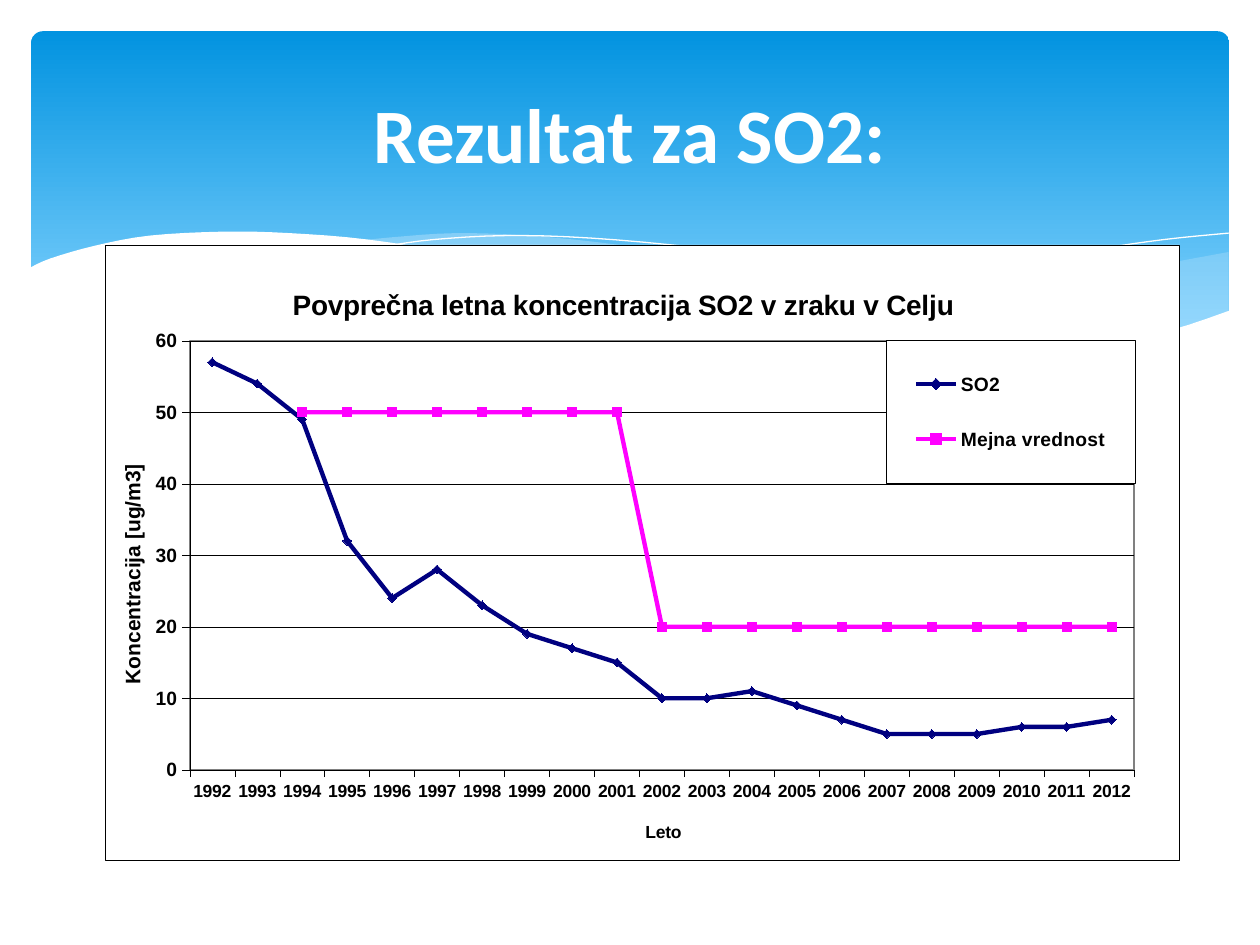
from lxml.etree import SubElement
from pptx import Presentation
from pptx.chart.data import CategoryChartData as ChartData
from pptx.dml.color import RGBColor as RGB
from pptx.enum.chart import XL_CHART_TYPE as CT, XL_LEGEND_POSITION as LP
from pptx.enum.chart import XL_MARKER_STYLE as MS, XL_TICK_MARK as TM
from pptx.enum.shapes import MSO_SHAPE as SHAPE
from pptx.enum.text import MSO_ANCHOR as ANCHOR, PP_ALIGN as ALIGN
from pptx.oxml import parse_xml
from pptx.oxml.ns import nsdecls, qn
from pptx.util import Cm, Pt

COLORS = {"top": "0293E0", "bottom": "83D3FE", "wave": "C6E7FC", "white": "FFFFFF",
          "black": "000000", "frame": "808080", "so2": "000080", "limit": "FF00FF"}

SWELL = [(24.77, 5.08), (23.01, 5.41), (21.87, 5.66), (19.13, 6.3), (16.79, 6.73),
         (18.59, 6.96), (20.4, 7.06), (21.92, 6.98), (23.19, 6.78), (24.1, 6.53),
         (24.77, 6.27)]
BAND = [(7.26, 4.85), (9.19, 5.16), (11.4, 5.64), (13.46, 6.1), (15.7, 6.55),
        (17.65, 6.86), (19.33, 7.04), (21.03, 7.06), (22.68, 6.93), (20.5, 6.6),
        (17.93, 6.1), (15.98, 5.64), (14.1, 5.21), (12.42, 4.93), (10.67, 4.75),
        (9.17, 4.7), (7.95, 4.78), (7.26, 4.85)]
FALLING = [(7.85, 4.95), (8.74, 4.83), (10.19, 4.75), (11.91, 4.8), (14.12, 5),
           (16.15, 5.28), (18.47, 5.74), (21.11, 6.38), (23.04, 6.91)]
RISING = [(15.57, 6.53), (17.65, 5.97), (19.71, 5.49), (22, 5.05), (23.47, 4.83),
          (24.77, 4.7)]
SHORE = [(24.82, 6.25), (23.62, 6.65), (22.23, 6.93), (20.55, 7.04), (18.44, 6.91),
         (16.46, 6.65), (14.1, 6.22), (11.35, 5.59), (9.27, 5.13), (7.42, 4.83),
         (5.84, 4.7), (4.5, 4.67), (3.02, 4.75), (1.93, 4.95), (1.02, 5.21), (0.58, 5.41)]

SO2 = [57, 54, 49, 32, 24, 28, 23, 19, 17, 15, 10, 10, 11, 9, 7, 5, 5, 5, 6, 6, 7]
LIMIT = [None] * 2 + [50] * 8 + [20] * 11


def rgb(name):
    """Return the named colour."""
    return RGB.from_string(COLORS[name])


def style_font(font, size, face="Arial", color="black", bold=True):
    """Set the look of a font."""
    font.size, font.name, font.bold = Pt(size), face, bold
    font.color.rgb = rgb(color)


def put_text(tf, text, align=ALIGN.CENTER, **fmt):
    """Write one formatted run into a text frame."""
    p = tf.paragraphs[0]
    p.alignment = align
    r = p.add_run()
    r.text = text
    style_font(r.font, **fmt)


def smooth(knots, steps=4):
    """Return points on a Catmull-Rom curve through the knots."""
    ends = [knots[0], *knots, knots[-1]]
    points = [knots[0]]
    for a, b, c, d in zip(ends, ends[1:], ends[2:], ends[3:]):
        for t in (i / steps for i in range(1, steps + 1)):
            points.append(tuple(
                (2 * q + (r - p) * t + (2 * p - 5 * q + 4 * r - s) * t ** 2
                 + (3 * q - p - 3 * r + s) * t ** 3) / 2
                for p, q, r, s in zip(a, b, c, d)))
    return points


def place(el, after=None, inner=False, **frame):
    """Give a chart part a manual layout in fractions of the chart."""
    for old in el.findall(qn("c:layout")):
        el.remove(old)
    tags = {"layoutTarget": "inner"} if inner else {}
    tags.update(xMode="edge", yMode="edge", **frame)
    body = "".join(f'<c:{tag} val="{val}"/>' for tag, val in tags.items())
    layout = parse_xml(f'<c:layout {nsdecls("c")}><c:manualLayout>{body}'
                       '</c:manualLayout></c:layout>')
    if after:
        el.find(qn(after)).addnext(layout)
    else:
        el.insert(0, layout)


def box(el, line="black", width=0.25):
    """Give a chart part a white fill and an outline."""
    sppr = parse_xml(
        f'<c:spPr {nsdecls("c", "a")}><a:solidFill><a:srgbClr val="{COLORS["white"]}"/>'
        f'</a:solidFill><a:ln w="{Pt(width)}"><a:solidFill><a:srgbClr val="{COLORS[line]}"/>'
        '</a:solidFill></a:ln></c:spPr>')
    txpr = el.find(qn("c:txPr"))
    if txpr is None:
        el.append(sppr)
    else:
        txpr.addprevious(sppr)


class Deck:
    """Hold the style and the current slide."""

    def __init__(self, prs):
        self.s = prs.slides.add_slide(prs.slide_layouts[6])
        self.shapes = self.s.shapes

    def banner(self, x, y, w, h):
        """Add the rounded gradient banner."""
        sp = self.shapes.add_shape(SHAPE.ROUNDED_RECTANGLE, Cm(x), Cm(y), Cm(w), Cm(h))
        sp.shadow.inherit = False
        sp.adjustments[0] = 0.034
        sp.line.fill.background()
        sp.fill.gradient()
        sp.fill.gradient_angle = 270
        for stop, name, pos in zip(sp.fill.gradient_stops, ("top", "bottom"), (0, 0.9)):
            stop.color.rgb, stop.position = rgb(name), pos

    def wave(self, knots, fill=None, opacity=100, corners=()):
        """Add a filled wave, or a thin white curve if it has no fill."""
        pts = [(Cm(x), Cm(y)) for x, y in smooth(knots) + list(corners)]
        fb = self.shapes.build_freeform(*pts[0])
        fb.add_line_segments(pts[1:], close=bool(fill))
        sp = fb.convert_to_shape()
        sp.shadow.inherit = False
        if not fill:
            sp.fill.background()
            sp.line.color.rgb, sp.line.width = rgb("white"), Pt(0)
            return
        sp.line.fill.background()
        sp.fill.solid()
        sp.fill.fore_color.rgb = rgb(fill)
        if opacity < 100:
            clr = sp.fill._xPr.find(".//" + qn("a:srgbClr"))
            SubElement(clr, qn("a:alpha")).set("val", str(opacity * 1000))

    def title(self, text, x, y, w, h):
        """Add the slide title."""
        tf = self.shapes.add_textbox(Cm(x), Cm(y), Cm(w), Cm(h)).text_frame
        tf.word_wrap, tf.vertical_anchor = True, ANCHOR.MIDDLE
        put_text(tf, text, size=44, face="Calibri", color="white")

    def axis(self, axis, title, title_size, size, x, y):
        """Style a chart axis and place its title."""
        put_text(axis.axis_title.text_frame, title, size=title_size)
        place(axis.axis_title._element, after="c:tx", x=x, y=y)
        style_font(axis.tick_labels.font, size)
        axis.major_tick_mark, axis.minor_tick_mark = TM.OUTSIDE, TM.NONE
        lines = [axis.format.line]
        if axis.has_major_gridlines:
            lines.append(axis.major_gridlines.format.line)
        for line in lines:
            line.color.rgb, line.width = rgb("black"), Pt(0.25)

    def line_chart(self, title, cats, series, x, y, w, h):
        """Add the line chart; series holds name, values, colour and marker."""
        data = ChartData()
        data.categories = cats
        for name, vals, *_ in series:
            data.add_series(name, vals)
        chart = self.shapes.add_chart(
            CT.LINE_MARKERS, Cm(x), Cm(y), Cm(w), Cm(h), data).chart
        style_font(chart.font, 10, bold=False)
        put_text(chart.chart_title.text_frame, title, size=16)
        place(chart.chart_title._element, after="c:tx", x=0.17, y=0.06)
        chart.plots[0].vary_by_categories = False
        for ser, (_, _, color, marker) in zip(chart.plots[0].series, series):
            ser.smooth = False
            ser.format.line.color.rgb, ser.format.line.width = rgb(color), Pt(2.5)
            ser.marker.style, ser.marker.size = marker, 5
            ser.marker.format.fill.solid()
            ser.marker.format.fill.fore_color.rgb = rgb(color)
            ser.marker.format.line.color.rgb = rgb(color)
        value = chart.value_axis
        value.minimum_scale, value.maximum_scale, value.major_unit = 0, 60, 10
        self.axis(chart.category_axis, "Leto", 10, 10, 0.5, 0.93)
        self.axis(value, "Koncentracija [ug/m3]", 12, 11, 0.01, 0.35)
        chart.has_legend = True
        legend = chart.legend
        legend.position, legend.include_in_layout = LP.RIGHT, False
        style_font(legend.font, 11)
        place(legend._element, after="c:legendPos", x=0.727, y=0.155, w=0.232, h=0.232)
        plot = chart._chartSpace.chart.plotArea
        place(plot, inner=True, x=0.079, y=0.156, w=0.879, h=0.697)
        box(plot, "frame", 1)
        box(legend._element)
        box(chart._chartSpace)


def main():
    """Build the slide and save it."""
    prs = Presentation()
    prs.slide_width, prs.slide_height = Cm(25.4), Cm(19.05)
    deck = Deck(prs)
    deck.banner(0.63, 0.63, 24.15, 6.86)
    deck.wave(SWELL, "wave", 29)
    deck.wave(BAND, "wave", 40)
    deck.wave(FALLING)
    deck.wave(RISING)
    deck.wave(SHORE, "white", corners=[(0.58, 8.36), (24.82, 8.36)])
    deck.title("Rezultat za SO2:", 1.27, 0.94, 22.86, 3.48)
    deck.line_chart("Povprečna letna koncentracija SO2 v zraku v Celju",
                    [str(year) for year in range(1992, 2013)],
                    [("SO2", SO2, "so2", MS.DIAMOND),
                     ("Mejna vrednost", LIMIT, "limit", MS.SQUARE)],
                    2.11, 4.93, 21.67, 12.42)
    prs.save("out.pptx")


if __name__ == "__main__":
    main()
